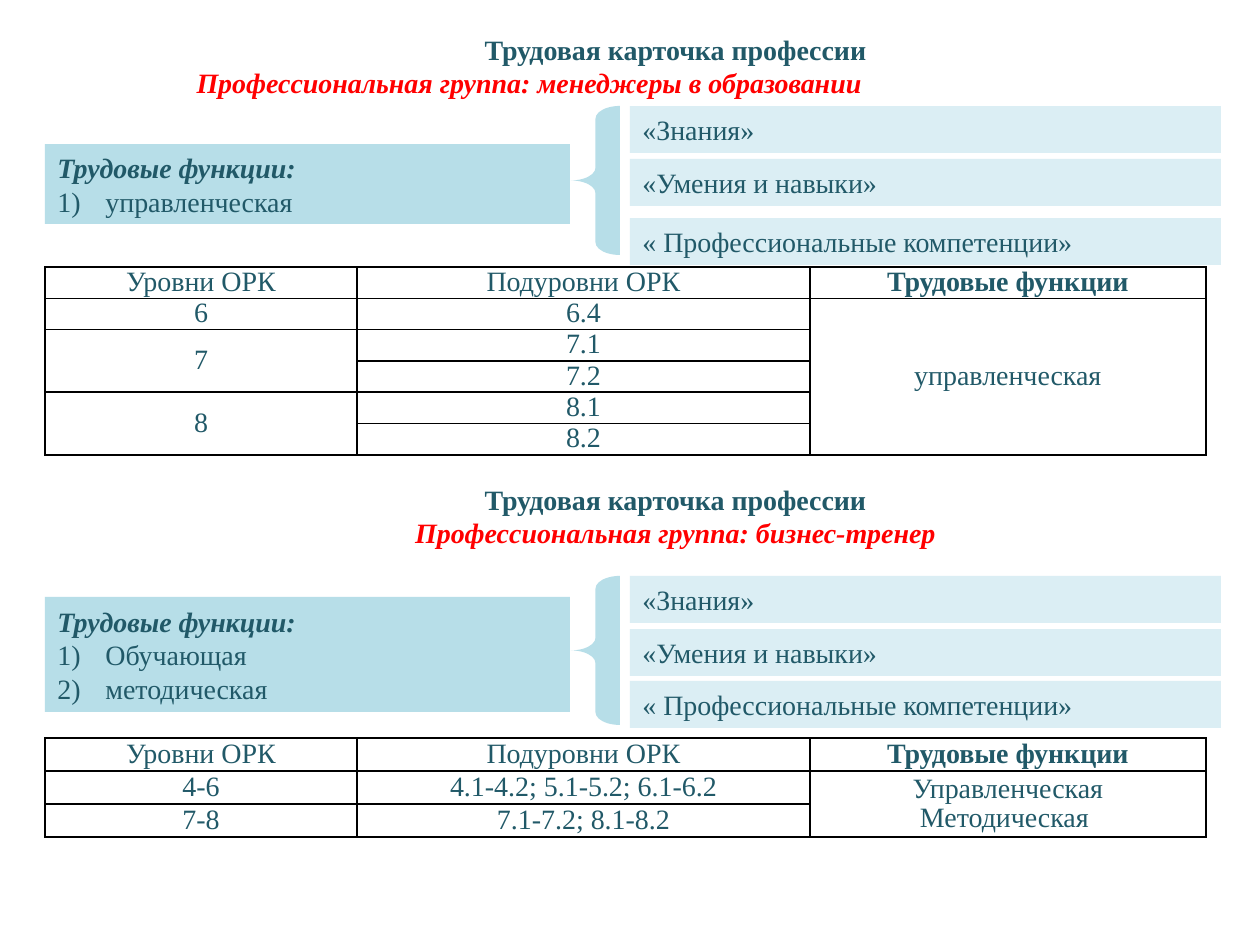
from lxml.etree import SubElement
from pptx import Presentation
from pptx.dml.color import RGBColor
from pptx.enum.shapes import MSO_SHAPE
from pptx.enum.text import MSO_ANCHOR, MSO_AUTO_SIZE, PP_ALIGN
from pptx.oxml.ns import qn
from pptx.util import Emu, Pt

TEAL = RGBColor(0x21, 0x59, 0x68)
RED = RGBColor(0xFF, 0, 0)
MID_BLUE = RGBColor(0xB7, 0xDE, 0xE8)
PALE_BLUE = RGBColor(0xDB, 0xEE, 0xF4)
FONT = "Times New Roman"

LEFT, CENTER = PP_ALIGN.LEFT, PP_ALIGN.CENTER
COLUMNS = [312, 453, 396]
HEADER = ["Уровни ОРК", "Подуровни ОРК", "Трудовые функции"]
OUTCOMES = ["«Знания»", "«Умения и навыки»", "« Профессиональные компетенции»"]

CARDS = [
    {
        "heading_top": 26,
        "group": "Профессиональная группа: менеджеры в образовании",
        "group_align": LEFT,
        "functions": ["управленческая"],
        "functions_top": 144, "functions_height": 80,
        "brace_top": 106, "outcome_tops": [106, 159, 218],
        "table_top": 267, "row_height": 31,
        "rows": [["6", "6.4", "управленческая"], ["7", "7.1", ""], ["", "7.2", ""],
                 ["8", "8.1", ""], ["", "8.2", ""]],
        "merges": [(1, 2, 5), (2, 0, 3), (4, 0, 5)],
    },
    {
        "heading_top": 476,
        "group": "Профессиональная группа: бизнес-тренер",
        "group_align": CENTER,
        "functions": ["Обучающая", "методическая"],
        "functions_top": 597, "functions_height": 115,
        "brace_top": 576, "outcome_tops": [576, 629, 681],
        "table_top": 738, "row_height": 33,
        "rows": [["4-6", "4.1-4.2; 5.1-5.2; 6.1-6.2", "Управленческая\nМетодическая "],
                 ["7-8", "7.1-7.2; 8.1-8.2", ""]],
        "merges": [(1, 2, 2)],
    },
]


def px(*lengths):
    """Turn pixels (126 to the inch) into EMU."""
    return [Emu(round(length * 914400 / 126)) for length in lengths]


def write(frame, lines, align=LEFT, line_spacing=1.0):
    """Fill a frame with lines of (text, colour, bold, italic); return the paragraphs."""
    for index, (text, color, bold, italic) in enumerate(lines):
        para = frame.add_paragraph() if index else frame.paragraphs[0]
        para.alignment = align
        para.line_spacing = line_spacing
        para.space_before = Pt(0)
        span = para.add_run()
        span.text = text
        span.font.name, span.font.size = FONT, Pt(16)
        span.font.color.rgb = color
        span.font.bold, span.font.italic = bold, italic
    return frame.paragraphs


deck = Presentation()
deck.slide_width, deck.slide_height = px(1260, 945)
page = deck.slides.add_slide(deck.slide_layouts[5])

for number, card in enumerate(CARDS):
    # Heading
    place = px(184, card["heading_top"], 983, 81)
    if number == 0:
        heading = page.shapes.title
        heading.left, heading.top, heading.width, heading.height = place
    else:
        heading = page.shapes.add_textbox(*place)
    frame = heading.text_frame
    frame.word_wrap = True
    frame.auto_size = MSO_AUTO_SIZE.SHAPE_TO_FIT_TEXT
    frame.vertical_anchor = MSO_ANCHOR.TOP
    paras = write(frame, [("Трудовая карточка профессии", TEAL, True, False),
                          (card["group"], RED, True, True)], CENTER)
    paras[1].alignment = card["group_align"]

    # Functions, brace and outcomes
    function_lines = [("Трудовые функции:", TEAL, True, True)]
    function_lines += [(text, TEAL, False, False) for text in card["functions"]]
    blocks = [
        (MSO_SHAPE.RECTANGLE, (45, card["functions_top"], 525, card["functions_height"]),
         MID_BLUE, function_lines),
        (MSO_SHAPE.LEFT_BRACE, (571, card["brace_top"], 49, 149), MID_BLUE, []),
    ]
    for top, text in zip(card["outcome_tops"], OUTCOMES):
        blocks.append((MSO_SHAPE.RECTANGLE, (630, top, 591, 47), PALE_BLUE,
                       [(text, TEAL, False, False)]))
    for kind, place, fill, lines in blocks:
        box = page.shapes.add_shape(kind, *px(*place))
        box.shadow.inherit = False
        box.fill.solid()
        box.fill.fore_color.rgb = fill
        box.line.fill.background()
        if kind == MSO_SHAPE.LEFT_BRACE:
            box.adjustments[0] = 0.26
            continue
        frame = box.text_frame
        frame.word_wrap = True
        frame.auto_size = MSO_AUTO_SIZE.SHAPE_TO_FIT_TEXT
        frame.vertical_anchor = MSO_ANCHOR.MIDDLE
        for para in write(frame, lines)[1:]:
            properties = para._p.get_or_add_pPr()
            indent = px(48)[0]
            properties.set("marL", str(indent))
            properties.set("indent", str(-indent))
            SubElement(properties, qn("a:buFont"), typeface="+mj-lt")
            SubElement(properties, qn("a:buAutoNum"), type="arabicParenR")

    # Table of levels
    rows = [HEADER] + card["rows"]
    place = px(45, card["table_top"], sum(COLUMNS), card["row_height"] * len(rows))
    table = page.shapes.add_table(len(rows), len(COLUMNS), *place).table
    for column, width in zip(table.columns, px(*COLUMNS)):
        column.width = width
    for row_index, row in enumerate(rows):
        table.rows[row_index].height = px(card["row_height"])[0]
        for column_index, text in enumerate(row):
            cell = table.cell(row_index, column_index)
            cell.vertical_anchor = MSO_ANCHOR.MIDDLE
            cell.margin_left = cell.margin_right = px(5)[0]
            cell.margin_top = cell.margin_bottom = 0
            bold = row_index == 0 and column_index == 2
            if text:
                write(cell.text_frame, [(line, TEAL, bold, False) for line in text.split("\n")],
                      CENTER, 0.93)
            else:
                cell.text_frame.paragraphs[0].font.size = Pt(16)
                cell.text_frame.paragraphs[0].line_spacing = 0.93
            properties = cell._tc.get_or_add_tcPr()
            for side in ("a:lnL", "a:lnR", "a:lnT", "a:lnB"):
                border = SubElement(properties, qn(side), w=str(Pt(1)))
                color = SubElement(border, qn("a:solidFill"))
                SubElement(color, qn("a:srgbClr"), val="000000")
            cell.fill.background()
    for top, column_index, bottom in card["merges"]:
        table.cell(top, column_index).merge(table.cell(bottom, column_index))

deck.save("out.pptx")
